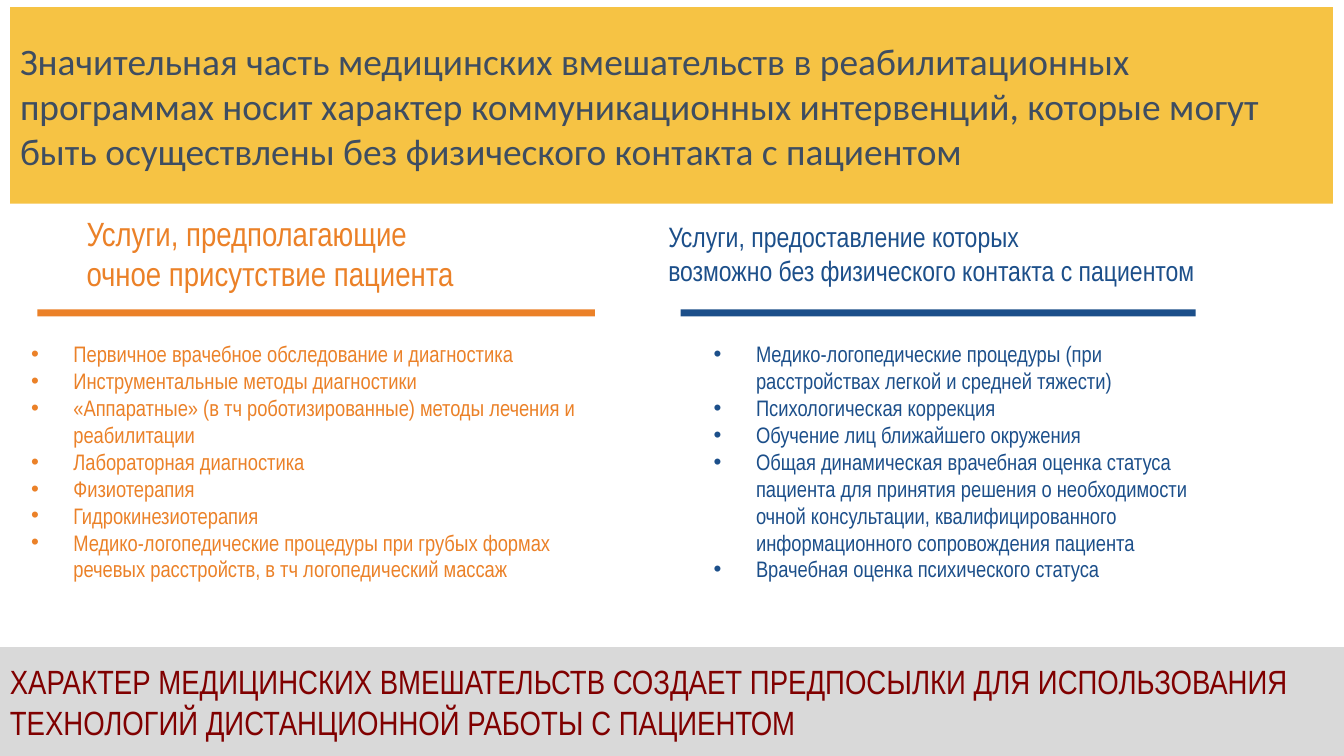
from dataclasses import dataclass

from lxml.etree import SubElement
from pptx import Presentation
from pptx.dml.color import RGBColor
from pptx.enum.shapes import MSO_SHAPE as Shape
from pptx.enum.text import MSO_ANCHOR as Anchor, PP_ALIGN as Align
from pptx.oxml.ns import qn
from pptx.util import Inches, Pt


@dataclass(frozen=True)
class Theme:
    title_font: str = "Calibri"
    body_font: str = "Arial Narrow"
    banner_fill: str = "F6C344"
    banner_text: str = "3E4D61"
    footer_fill: str = "D9D9D9"
    footer_text: str = "800000"
    in_person: str = "EB8128"
    remote: str = "1C4F8A"
    title_size: float = 26.7
    large_size: float = 24
    medium_size: float = 20
    list_size: float = 16


THEME = Theme()
BULLET_INDENT = Inches(0.42)

TITLE = (
    "Значительная часть медицинских вмешательств в реабилитационных программах "
    "носит характер коммуникационных интервенций, которые могут быть "
    "осуществлены без физического контакта с пациентом"
)
CONCLUSION = (
    "ХАРАКТЕР МЕДИЦИНСКИХ ВМЕШАТЕЛЬСТВ СОЗДАЕТ ПРЕДПОСЫЛКИ ДЛЯ ИСПОЛЬЗОВАНИЯ "
    "ТЕХНОЛОГИЙ ДИСТАНЦИОННОЙ РАБОТЫ С ПАЦИЕНТОМ"
)
IN_PERSON_HEADING = ["Услуги, предполагающие", "очное присутствие пациента"]
IN_PERSON_SERVICES = [
    "Первичное врачебное обследование и диагностика",
    "Инструментальные методы диагностики",
    "«Аппаратные» (в тч роботизированные) методы лечения и реабилитации",
    "Лабораторная диагностика",
    "Физиотерапия",
    "Гидрокинезиотерапия",
    "Медико-логопедические процедуры при грубых формах речевых расстройств, "
    "в тч логопедический массаж",
]
REMOTE_HEADING = [
    "Услуги, предоставление которых",
    "возможно без физического контакта с пациентом",
]
REMOTE_SERVICES = [
    "Медико-логопедические процедуры (при расстройствах легкой и средней тяжести)",
    "Психологическая коррекция",
    "Обучение лиц ближайшего окружения",
    "Общая динамическая врачебная оценка статуса пациента для принятия решения "
    "о необходимости очной консультации, квалифицированного информационного "
    "сопровождения пациента",
    "Врачебная оценка психического статуса",
]


def add_bullet(paragraph):
    properties = paragraph._p.get_or_add_pPr()
    properties.set("marL", str(BULLET_INDENT))
    properties.set("indent", str(-BULLET_INDENT))
    SubElement(properties, qn("a:buFont"), typeface="Arial")
    SubElement(properties, qn("a:buChar"), char="•")


def write_text(frame, lines, font, size, color, bulleted=False):
    for index, line in enumerate(lines):
        paragraph = frame.paragraphs[0] if index == 0 else frame.add_paragraph()
        paragraph.alignment = Align.LEFT
        if bulleted:
            add_bullet(paragraph)
        run = paragraph.add_run()
        run.text = line
        for name, value in {"name": font, "size": Pt(size)}.items():
            setattr(run.font, name, value)
        run.font.color.rgb = RGBColor.from_string(color)


def add_rectangle(slide, box, fill):
    shape = slide.shapes.add_shape(Shape.RECTANGLE, *map(Inches, box))
    shape.shadow.inherit = False
    shape.fill.solid()
    shape.fill.fore_color.rgb = RGBColor.from_string(fill)
    shape.line.fill.background()
    return shape


def add_band(slide, box, text, fill, **text_format):
    """Draw a filled strip with vertically centred text."""
    frame = add_rectangle(slide, box, fill).text_frame
    frame.word_wrap = True
    frame.vertical_anchor = Anchor.MIDDLE
    write_text(frame, [text], **text_format)


def add_text_box(slide, box, lines, size, color, bulleted=False):
    frame = slide.shapes.add_textbox(*map(Inches, box)).text_frame
    frame.word_wrap = True
    write_text(frame, lines, THEME.body_font, size, color, bulleted)


def add_service_column(slide, box, heading, heading_box, heading_size,
                       rule_span, services, color):
    """Place a heading, a rule and a list; heading and rule are offset from box."""
    left, top, width, height = box
    dx, dy, heading_width, heading_height = heading_box
    rule_dx, rule_width = rule_span
    add_text_box(slide, (left + dx, top + dy, heading_width, heading_height),
                 heading, heading_size, color)
    add_rectangle(slide, (left + rule_dx, top - 0.26, rule_width, 0.07), color)
    add_text_box(slide, box, services, THEME.list_size, color, bulleted=True)


def build_slide(presentation):
    slide = presentation.slides.add_slide(presentation.slide_layouts[6])
    add_band(slide, (0.1, 0.07, 13.12, 1.95), TITLE, THEME.banner_fill,
             font=THEME.title_font, size=THEME.title_size,
             color=THEME.banner_text)
    add_service_column(slide, (0.21, 3.33, 6.04, 2.79), IN_PERSON_HEADING,
                       (0.55, -1.27, 4.69, 0.91), THEME.large_size,
                       (0.16, 5.53), IN_PERSON_SERVICES, THEME.in_person)
    add_service_column(slide, (6.98, 3.33, 5.22, 2.79), REMOTE_HEADING,
                       (-0.45, -1.2, 6.7, 0.77), THEME.medium_size,
                       (-0.23, 5.11), REMOTE_SERVICES, THEME.remote)
    add_band(slide, (0, 6.42, 13.33, 1.08), CONCLUSION, THEME.footer_fill,
             font=THEME.body_font, size=THEME.large_size,
             color=THEME.footer_text)


def main():
    presentation = Presentation()
    presentation.slide_width = Inches(13.33)
    presentation.slide_height = Inches(7.5)
    build_slide(presentation)
    presentation.save("out.pptx")


if __name__ == "__main__":
    main()
